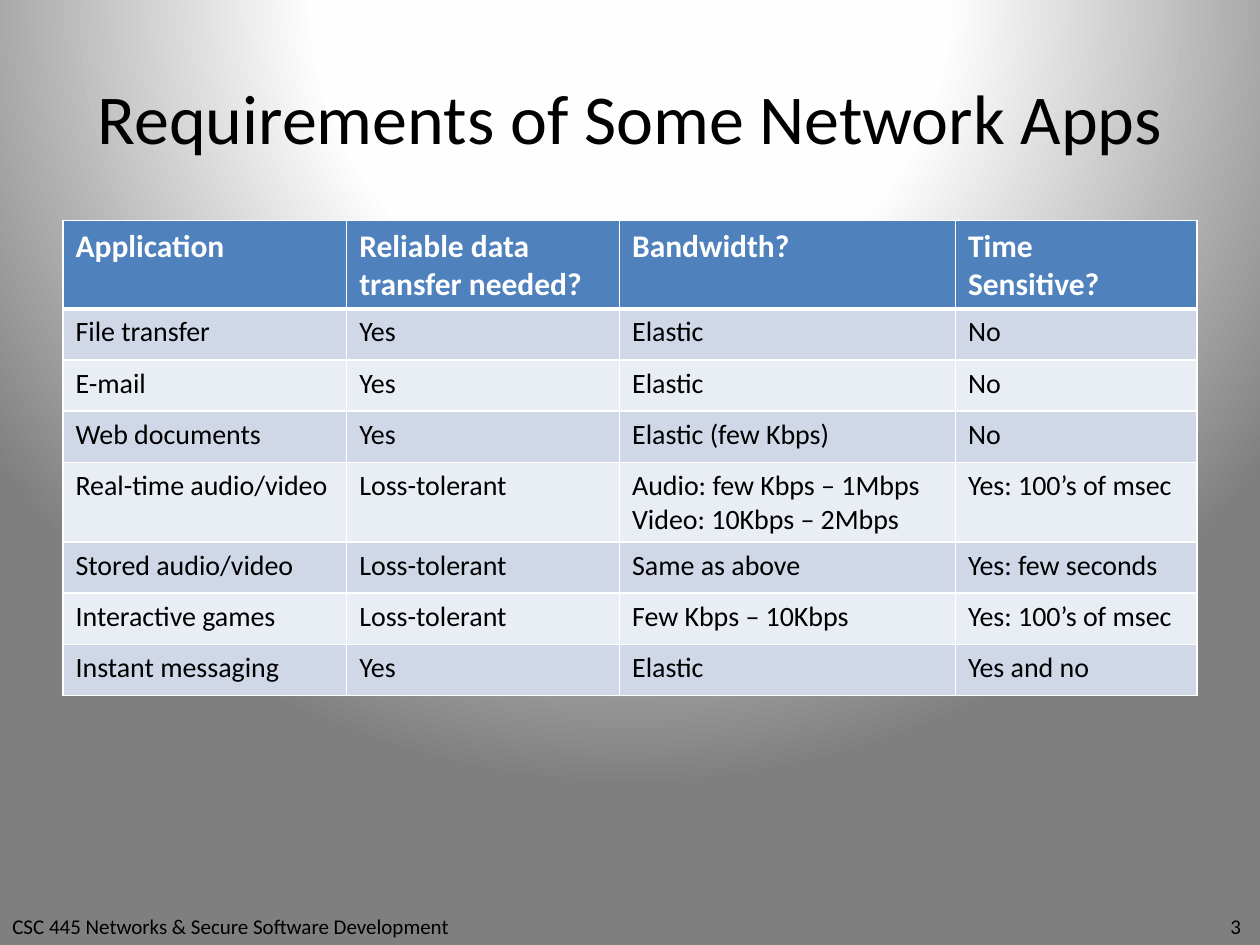
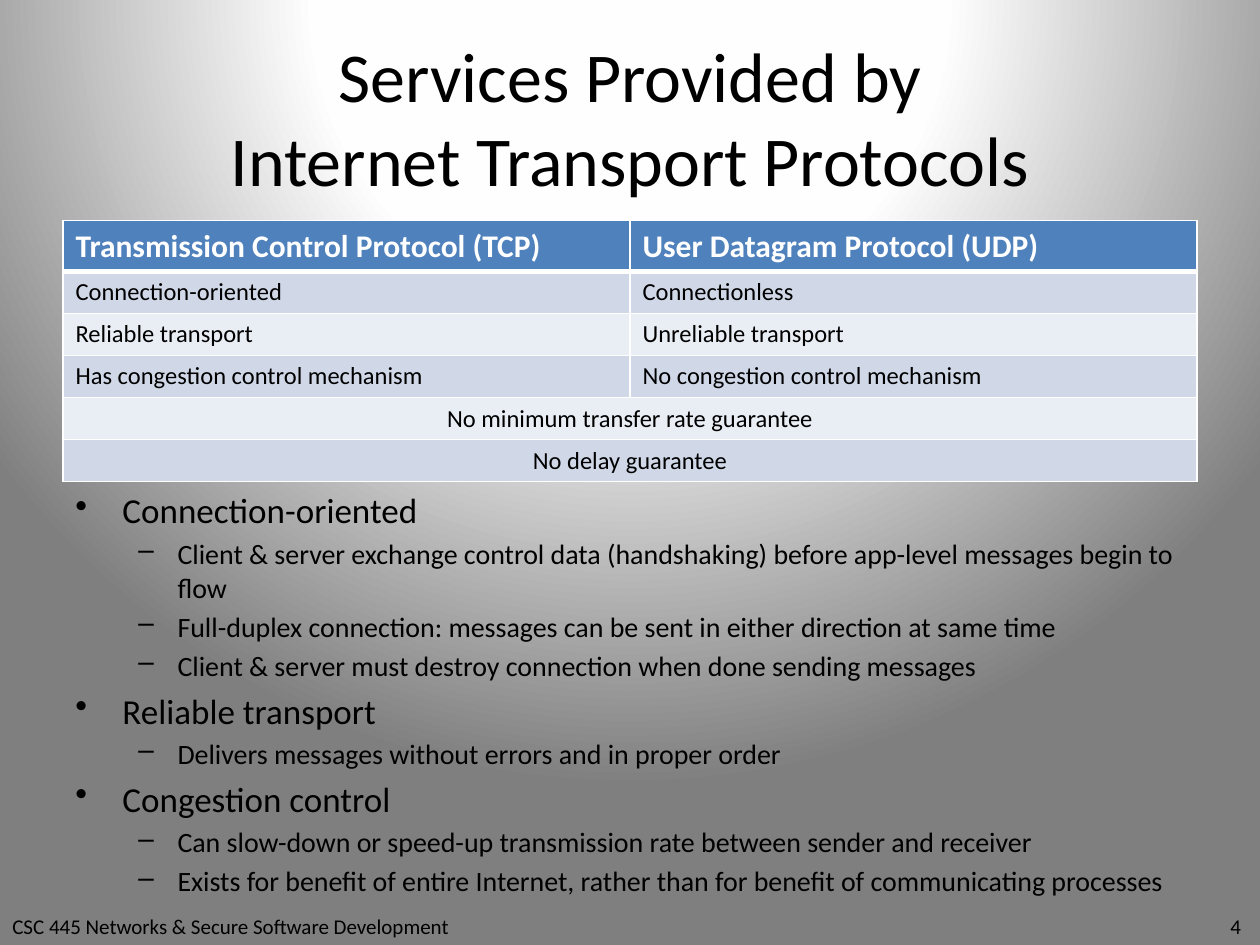
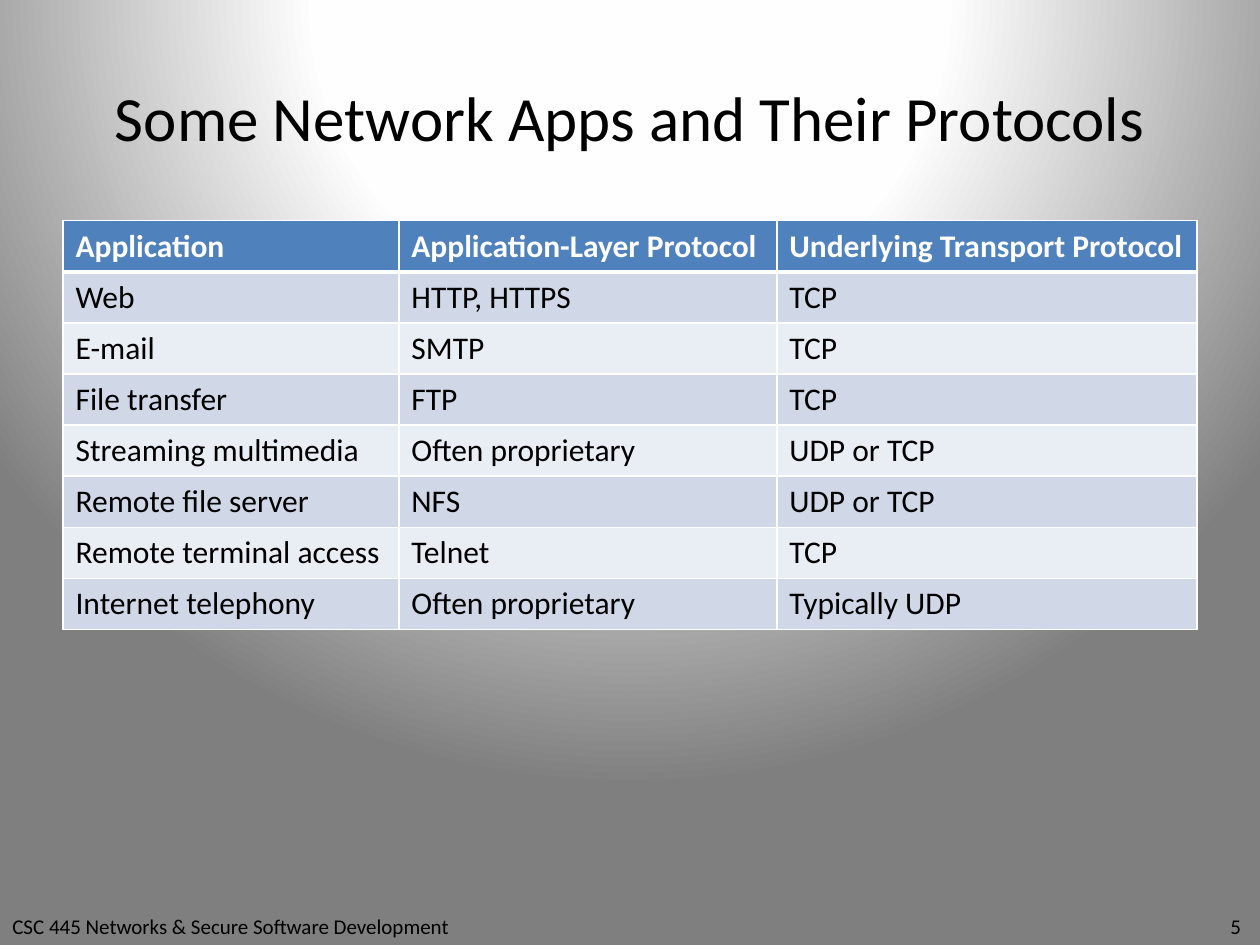
from pptx import Presentation
from pptx.dml.color import RGBColor
from pptx.enum.text import MSO_ANCHOR, PP_ALIGN
from pptx.oxml import parse_xml
from pptx.oxml.ns import nsdecls
from pptx.util import Cm, Pt

FONT = "Calibri"
BLACK, WHITE = "000000", "FFFFFF"
HEADER_FILL = "4F81BD"
BAND_FILLS = ("E9EDF4", "D0D8E8")
BACKGROUND_STOPS = ((0, WHITE), (40, "FEFEFE"), (100, "7F7F7F"))
FOOTER_TEXT = "CSC 445 Networks & Secure Software Development"
FIRST_PAGE = 3

FOOTER_BOX = (0, 18.29, 25.4, 0.76)
TITLE_BOX = (1.27, 0.76, 22.86, 3.18)
TABLE_CORNER = (1.27, 4.45)
BODY_BOX = (1.27, 9.73, 22.86, 7.29)

BULLET_LEVELS = (
    {"mark": "•", "size": 20, "margin": 0.95, "hanging": 0.95},
    {"mark": "–", "size": 16, "margin": 2.06, "hanging": 0.79},
)

SLIDES = (
    {
        "title": "Requirements of Some Network Apps",
        "title_size": 40,
        "table": {
            "widths": (5.72, 5.5, 6.77, 4.87),
            "row_height": 1.03,
            "size": 16,
            "rows": (
                ("Application", "Reliable data transfer needed?", "Bandwidth?", "Time\nSensitive?"),
                ("File transfer", "Yes", "Elastic", "No"),
                ("E-mail", "Yes", "Elastic", "No"),
                ("Web documents", "Yes", "Elastic (few Kbps)", "No"),
                ("Real-time audio/video", "Loss-tolerant",
                 "Audio: few Kbps – 1Mbps\nVideo: 10Kbps – 2Mbps", "Yes: 100’s of msec"),
                ("Stored audio/video", "Loss-tolerant", "Same as above", "Yes: few seconds"),
                ("Interactive games", "Loss-tolerant", "Few Kbps – 10Kbps", "Yes: 100’s of msec"),
                ("Instant messaging", "Yes", "Elastic", "Yes and no"),
            ),
        },
    },
    {
        "title": "Services Provided by\vInternet Transport Protocols",
        "title_size": 40,
        "bullets": (
            (0, "Connection-oriented"),
            (1, "Client & server exchange control data (handshaking) before app-level messages begin to flow"),
            (1, "Full-duplex connection: messages can be sent in either direction at same time"),
            (1, "Client & server must destroy connection when done sending messages"),
            (0, "Reliable transport"),
            (1, "Delivers messages without errors and in proper order"),
            (0, "Congestion control"),
            (1, "Can slow-down or speed-up transmission rate between sender and receiver"),
            (1, "Exists for benefit of entire Internet, rather than for benefit of communicating processes"),
        ),
        "table": {
            "widths": (11.43, 11.43),
            "row_height": 0.56,
            "size": 14,
            "rows": (
                ("Transmission Control Protocol (TCP)", "User Datagram Protocol (UDP)"),
                ("Connection-oriented", "Connectionless"),
                ("Reliable transport", "Unreliable transport"),
                ("Has congestion control mechanism", "No congestion control mechanism"),
                ("No minimum transfer rate guarantee",),
                ("No delay guarantee",),
            ),
        },
    },
    {
        "title": "Some Network Apps and Their Protocols",
        "title_size": 36,
        "table": {
            "widths": (6.77, 7.62, 8.47),
            "row_height": 1.03,
            "size": 18,
            "rows": (
                ("Application", "Application-Layer Protocol", "Underlying Transport Protocol"),
                ("Web", "HTTP, HTTPS", "TCP"),
                ("E-mail", "SMTP", "TCP"),
                ("File transfer", "FTP", "TCP"),
                ("Streaming multimedia", "Often proprietary", "UDP or TCP"),
                ("Remote file server", "NFS", "UDP or TCP"),
                ("Remote terminal access", "Telnet", "TCP"),
                ("Internet telephony", "Often proprietary", "Typically UDP"),
            ),
        },
    },
)


def color(value):
    """Turn a hex string into a colour."""
    return RGBColor.from_string(value)


def format_paragraph(paragraph, size, font_color=BLACK, bold=False, **layout):
    """Apply font values and paragraph layout values."""
    font_values = {"name": FONT, "size": Pt(size), "bold": bold}
    for target, values in ((paragraph.font, font_values), (paragraph, layout)):
        for name, value in values.items():
            setattr(target, name, value)
    paragraph.font.color.rgb = color(font_color)
    for run in paragraph.runs:
        for name, value in font_values.items():
            setattr(run.font, name, value)
        run.font.color.rgb = color(font_color)


def add_text_frame(slide, box, anchor=MSO_ANCHOR.TOP):
    """Add a wrapping text box and return its text frame."""
    text_frame = slide.shapes.add_textbox(*map(Cm, box)).text_frame
    for name, value in {"word_wrap": True, "vertical_anchor": anchor}.items():
        setattr(text_frame, name, value)
    return text_frame


def paint_background(slide_master):
    """Give every slide the circular grey gradient."""
    slide_master.background.fill.solid()
    properties = slide_master.element.cSld.bg.bgPr
    stops = "".join(
        f'<a:gs pos="{position * 1000}"><a:srgbClr val="{value}"/></a:gs>'
        for position, value in BACKGROUND_STOPS
    )
    gradient = parse_xml(
        f'<a:gradFill {nsdecls("a")} rotWithShape="1"><a:gsLst>{stops}</a:gsLst><a:path path="circle">'
        '<a:fillToRect l="50000" t="-80000" r="50000" b="180000"/></a:path></a:gradFill>'
    )
    properties.replace(properties[0], gradient)


def add_footer(slide, box, page):
    """Add the course name with the page number at a right tab."""
    paragraph = add_text_frame(slide, box).paragraphs[0]
    paragraph.text = f"{FOOTER_TEXT}\t{page}"
    format_paragraph(paragraph, 12)
    position = Cm(box[2] - 0.63)
    tabs = parse_xml(f'<a:tabLst {nsdecls("a")}><a:tab pos="{position}" algn="r"/></a:tabLst>')
    paragraph._p.get_or_add_pPr().insert(0, tabs)


def add_title(slide, box, text, size):
    """Add the centred slide title."""
    paragraph = add_text_frame(slide, box, MSO_ANCHOR.MIDDLE).paragraphs[0]
    paragraph.text = text
    format_paragraph(paragraph, size, alignment=PP_ALIGN.CENTER)


def add_bullets(slide, box, bullets):
    """Add a two-level bullet list."""
    text_frame = add_text_frame(slide, box)
    text_frame.text = "\n".join(text for _, text in bullets)
    for paragraph, (level, _) in zip(text_frame.paragraphs, bullets):
        style = BULLET_LEVELS[level]
        size = style["size"]
        format_paragraph(paragraph, size, level=level, space_before=Pt(size * 0.2))
        properties = paragraph._p.get_or_add_pPr()
        properties.set("marL", str(Cm(style["margin"])))
        properties.set("indent", str(-Cm(style["hanging"])))
        mark = parse_xml(f'<a:buChar {nsdecls("a")} char="{style["mark"]}"/>')
        properties.find("{*}spcBef").addnext(mark)


def add_borders(cell, top, bottom):
    """Draw white borders around a cell."""
    properties = cell._tc.get_or_add_tcPr()
    for side, width in {"L": 1, "R": 1, "T": top, "B": bottom}.items():
        properties.append(parse_xml(
            f'<a:ln{side} {nsdecls("a")} w="{Pt(width)}"><a:solidFill>'
            f'<a:srgbClr val="{WHITE}"/></a:solidFill></a:ln{side}>'
        ))


def add_banded_table(slide, corner, widths, row_height, size, rows):
    """Add a table with a blue header; a row with one value spans all columns."""
    box = (*corner, sum(widths), row_height * len(rows))
    table = slide.shapes.add_table(len(rows), len(widths), *map(Cm, box)).table
    for name in ("first_row", "horz_banding"):
        setattr(table, name, False)
    for column, width in zip(table.columns, widths):
        column.width = Cm(width)
    for row_index, values in enumerate(rows):
        is_header = row_index == 0
        is_spanning = len(values) == 1
        row_fill = HEADER_FILL if is_header else BAND_FILLS[row_index % 2]
        style = {"size": 18, "font_color": WHITE, "bold": True} if is_header else {"size": size}
        if is_spanning:
            style["alignment"] = PP_ALIGN.CENTER
            table.cell(row_index, 0).merge(table.cell(row_index, len(widths) - 1))
        for column_index in range(len(widths)):
            cell = table.cell(row_index, column_index)
            add_borders(cell, 3 if row_index == 1 else 1, 3 if is_header else 1)
            cell.fill.solid()
            cell.fill.fore_color.rgb = color(row_fill)
            if column_index < len(values):
                cell.text_frame.text = values[column_index]
            for paragraph in cell.text_frame.paragraphs:
                format_paragraph(paragraph, **style)


def add_table_slide(presentation, page, content):
    """Add one slide with footer, title, optional bullets and a table."""
    slide = presentation.slides.add_slide(presentation.slide_layouts[6])
    add_footer(slide, FOOTER_BOX, page)
    add_title(slide, TITLE_BOX, content["title"], content["title_size"])
    if "bullets" in content:
        add_bullets(slide, BODY_BOX, content["bullets"])
    add_banded_table(slide, TABLE_CORNER, **content["table"])


def main():
    """Build the presentation and save it."""
    presentation = Presentation()
    presentation.slide_width, presentation.slide_height = Cm(25.4), Cm(19.05)
    paint_background(presentation.slide_master)
    for page, content in enumerate(SLIDES, FIRST_PAGE):
        add_table_slide(presentation, page, content)
    presentation.save("out.pptx")


if __name__ == "__main__":
    main()
